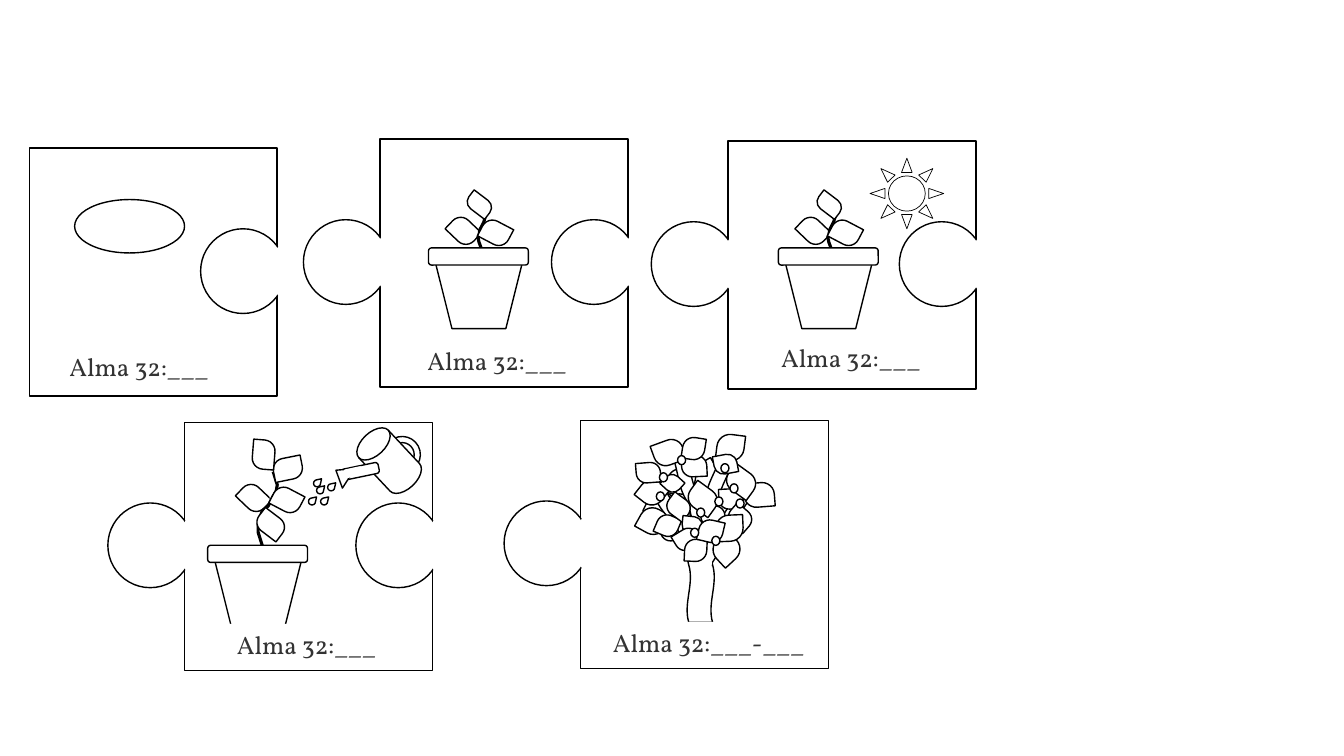
from pptx import Presentation
from pptx.dml.color import RGBColor
from pptx.enum import shapes, text
from pptx.util import Inches, Pt

KIND = shapes.MSO_SHAPE
CARD, KNOB = 2.46, 0.84
BLACK, WHITE, GREY = "000000", "FFFFFF", "333333"

# Stems and plant leaves are measured from the corner of the pot's rim.
YOUNG_STEM = [(0.53, 0.13), (0.54, 0.1), (0.54, 0.05), (0.5, -0.06),
              (0.49, -0.11), (0.5, -0.12), (0.51, -0.18), (0.53, -0.22),
              (0.55, -0.26), (0.56, -0.3), (0.56, -0.34), (0.54, -0.43)]
YOUNG_LEAVES = [(0.2, -0.28, 0.29, 0.22, 43.7), (0.52, -0.26, 0.29, 0.22, 27.8),
                (0.42, -0.56, 0.17, 0.26, 307.3)]
TALL_STEM = [(0.53, 0.16), (0.55, 0.11), (0.55, 0.03), (0.5, -0.13),
             (0.5, -0.21), (0.51, -0.24), (0.54, -0.34), (0.6, -0.39),
             (0.64, -0.47), (0.68, -0.54), (0.69, -0.6), (0.65, -0.73)]
TALL_LEAVES = [(0.31, -0.58, 0.29, 0.22, 43.7), (0.64, -0.56, 0.29, 0.22, 27.8),
               (0.52, -0.35, 0.21, 0.29, 307.3), (0.65, -0.87, 0.29, 0.22, 348.6),
               (0.41, -1.01, 0.29, 0.22, 274.6)]
DROPS = [(1.31, 0.64), (1.42, 0.61), (1.28, 0.57), (1.23, 0.75), (1.35, 0.75)]

# Tree parts are measured from the corner of the card.
BACK_LEAVES = [
    (1.3, 0.55, 0.24, 0.3, 85.5), (1.1, 0.42, 0.27, 0.26, 329.9),
    (0.86, 0.48, 0.27, 0.26, 10.4), (0.87, 0.73, 0.22, 0.22, 15.3),
    (0.66, 0.71, 0.27, 0.26, 26.4), (0.58, 0.87, 0.27, 0.26, 28.9),
    (0.81, 0.97, 0.2, 0.24, 71.7)]
BRANCHES = [(0.44, 0.84, 235.5), (0.95, 1, 298.7),
            (0.83, 0.69, 289.4), (0.62, 0.67, 252.4)]
FRONT_LEAVES = [
    (0.58, 0.59, 0.25, 0.25, 38.2), (1.35, 0.14, 0.27, 0.26, 187.3),
    (0.75, 0.17, 0.24, 0.3, 69.8), (0.82, 0.54, 0.18, 0.17, 42.2),
    (0.57, 0.4, 0.2, 0.24, 85.5), (1.02, 0.33, 0.21, 0.25, 87.1),
    (0.75, 0.94, 0.22, 0.21, 22.8), (0.87, 0.74, 0.2, 0.24, 126.4),
    (1.21, 0.83, 0.2, 0.24, 87.1), (1.09, 0.63, 0.24, 0.3, 126),
    (1.01, 0.17, 0.22, 0.22, 8.9), (1.39, 0.66, 0.2, 0.24, 87.1),
    (1.65, 0.59, 0.24, 0.3, 85.5), (1.47, 0.46, 0.24, 0.3, 126),
    (1.34, 0.32, 0.19, 0.23, 79.4), (1.48, 0.85, 0.2, 0.24, 130.9),
    (1.02, 0.94, 0.17, 0.2, 276.1), (0.95, 1.06, 0.2, 0.24, 238.6),
    (1.31, 1.15, 0.27, 0.26, 137.2), (1.34, 0.94, 0.27, 0.26, 177.7),
    (1.03, 1.18, 0.22, 0.22, 182.6), (1.17, 0.99, 0.24, 0.22, 193.2)]
BUDS = [(0.75, 0.71), (1.54, 0.78), (1.48, 0.63), (0.78, 0.52), (0.96, 0.35),
        (1.39, 0.43), (1.15, 0.87), (1.33, 0.76), (1.09, 1.07), (1.3, 1.15)]


def color(code):
    return RGBColor.from_string(code)


def paint(shape, line=BLACK, width=1):
    shape.shadow.inherit = False
    shape.fill.solid()
    shape.fill.fore_color.rgb = color(WHITE)
    if line:
        shape.line.color.rgb = color(line)
        shape.line.width = Pt(width)
    else:
        shape.line.fill.background()


def draw(group, kind, x, y, w, h, turn=0, adj=(), **style):
    shape = group.shapes.add_shape(kind, Inches(x), Inches(y), Inches(w), Inches(h))
    shape.rotation = turn
    for i, value in enumerate(adj):
        shape.adjustments[i] = value
    paint(shape, **style)
    return shape


def write(group, words, x, y, w, h=0.4, size=18, font="Vollkorn", ink=GREY):
    frame = draw(group, KIND.RECTANGLE, x, y, w, h, line=None).text_frame
    frame.word_wrap = False
    frame.auto_size = text.MSO_AUTO_SIZE.SHAPE_TO_FIT_TEXT
    frame.vertical_anchor = text.MSO_ANCHOR.TOP
    par = frame.paragraphs[0]
    par.alignment = text.PP_ALIGN.LEFT
    run = par.add_run()
    run.text = words
    run.font.size = Pt(size)
    run.font.name = font
    run.font.color.rgb = color(ink)


def leaf(group, x, y, w, h, turn):
    draw(group, KIND.ROUND_2_DIAG_RECTANGLE, x, y, w, h, turn, (0.5, 0))


def plant(group, x, y, stem, leaves):
    """Potted plant; x, y is the corner of the pot's rim."""
    first, *rest = [(x + dx, y + dy, w, h, turn) for dx, dy, w, h, turn in leaves]
    leaf(group, *first)
    spots = [(Inches(x + dx), Inches(y + dy)) for dx, dy in stem]
    pen = group.shapes.build_freeform(*spots[0])
    pen.add_line_segments(spots[1:], close=False)
    paint(pen.convert_to_shape(), width=2.25)
    for part in rest:
        leaf(group, *part)
    draw(group, KIND.TRAPEZOID, x + 0.04, y + 0.03, 0.92, 0.77, 180)
    draw(group, KIND.ROUNDED_RECTANGLE, x, y, 0.99, 0.17)


def seed(group, x, y):
    draw(group, KIND.OVAL, x + 0.45, y + 0.51, 1.09, 0.53)


def sprout(group, x, y):
    plant(group, x + 0.48, y + 1.08, YOUNG_STEM, YOUNG_LEAVES)


def sunny(group, x, y):
    draw(group, KIND.SUN, x + 1.41, y + 0.17, 0.73, 0.7, width=0.5)
    plant(group, x + 0.5, y + 1.06, YOUNG_STEM, YOUNG_LEAVES)


def watered(group, x, y):
    draw(group, KIND.DONUT, x + 1.98, y + 0.14, 0.36, 0.36, 316.9, (0.169,))
    draw(group, KIND.FLOWCHART_MAGNETIC_DISK, x + 1.83, y + 0.04, 0.4, 0.68, 316.9)
    draw(group, KIND.ROUNDED_RECTANGLE, x + 1.69, y + 0.3, 0.11, 0.37, 258.2, (0.258,))
    draw(group, KIND.ISOSCELES_TRIANGLE, x + 1.45, y + 0.44, 0.23, 0.15, 302.6)
    draw(group, KIND.ROUNDED_RECTANGLE, x + 1.63, y + 0.4, 0.09, 0.19, 258.2, (0.258,),
         line=None)
    for dx, dy in DROPS:
        draw(group, KIND.TEAR, x + dx, y + dy, 0.07, 0.07, adj=(1.286,))
    plant(group, x + 0.23, y + 1.22, TALL_STEM, TALL_LEAVES)


def tree(group, x, y):
    for dx, dy, *form in BACK_LEAVES:
        leaf(group, x + dx, y + dy, *form)
    draw(group, KIND.DOUBLE_WAVE, x + 0.62, y + 1.3, 1.14, 0.27, 270)
    for dx, dy, turn in BRANCHES:
        draw(group, KIND.DOUBLE_WAVE, x + dx, y + dy, 0.95, 0.15, turn)
    draw(group, KIND.OVAL, x + 1.11, y + 1.05, 0.19, 0.67, line=None)
    for dx, dy, *form in FRONT_LEAVES:
        leaf(group, x + dx, y + dy, *form)
    for dx, dy in BUDS:
        draw(group, KIND.OVAL, x + dx, y + dy, 0.08, 0.09)


def piece(slide, x, y, art, label, left=True, right=True):
    """Puzzle piece: card, knobs opened by white discs, drawing and label."""
    group = slide.shapes.add_group_shape()
    draw(group, KIND.RECTANGLE, x, y, CARD, CARD)
    for shown, edge in ((left, x), (right, x + CARD)):
        if shown:
            draw(group, KIND.OVAL, edge - 0.76, y + 0.8, KNOB, KNOB)
            draw(group, KIND.OVAL, edge - 0.06, y + 0.8, KNOB, KNOB, line=WHITE)
    art(group, x, y)
    words, dx, dy, w = label
    write(group, words, x + dx, y + dy, w)


def main():
    deck = Presentation()
    deck.slide_width, deck.slide_height = Inches(13.33), Inches(7.5)
    slide = deck.slides.add_slide(deck.slide_layouts[6])
    short = "Alma 32:___"
    piece(slide, 0.29, 1.47, seed, (short, 0.3, 1.97, 1.62), left=False)
    piece(slide, 3.77, 1.38, sprout, (short, 0.37, 2, 1.62))
    piece(slide, 7.22, 1.4, sunny, (short, 0.43, 1.95, 1.62))
    piece(slide, 1.83, 4.19, watered, (short, 0.42, 2, 1.62))
    piece(slide, 5.76, 4.17, tree, ("Alma 32:___-___", 0.22, 2, 2.12), right=False)
    deck.save("out.pptx")


if __name__ == "__main__":
    main()
